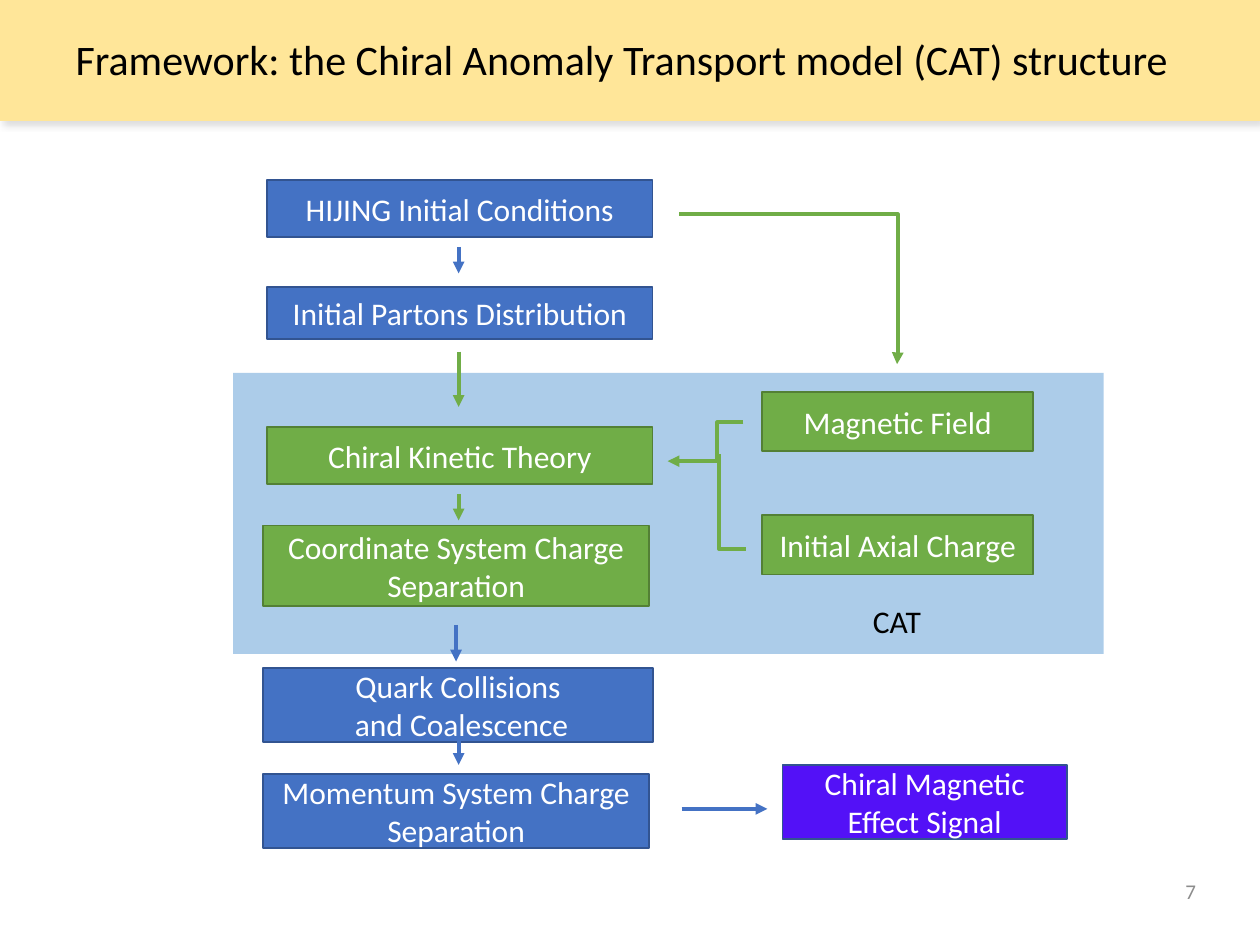
from dataclasses import dataclass

from lxml import etree
from pptx import Presentation
from pptx import util as u
from pptx.dml.color import RGBColor
from pptx.enum import shapes, text
from pptx.oxml import ns

# Grid of 100 columns by 75 rows over the slide
COLS, ROWS = 100, 75
FONT = "Calibri"
BLUE = RGBColor(0x44, 0x72, 0xC4)
NAVY = RGBColor(0x32, 0x54, 0x91)
GREEN = RGBColor(0x70, 0xAD, 0x47)
MOSS = RGBColor(0x53, 0x80, 0x35)
VIOLET = RGBColor(0x53, 0x11, 0xF7)
SKY = RGBColor(0x5B, 0x9B, 0xD5)
SAND = RGBColor(0xFF, 0xE6, 0x99)
GRAY = RGBColor(0x8C, 0x8C, 0x8C)
BLACK = RGBColor(0, 0, 0)
WHITE = RGBColor(0xFF, 0xFF, 0xFF)

ALIGN = text.PP_ALIGN
LEFT, MAIN, SIDE = 20.9, 21.2, 60.5
WIDE, SLIM = 30.6, 21.5
AXIS = 36.4


@dataclass
class Box:
    words: str
    x: float
    y: float
    w: float
    h: float
    fill: RGBColor = BLUE
    edge: RGBColor = NAVY


@dataclass
class Link:
    """An arrow; bend is the percentage of its width where an elbow turns."""
    x1: float
    y1: float
    x2: float
    y2: float
    color: RGBColor = BLUE
    bend: float | None = None
    head: bool = True


BOXES = [
    Box("HIJING Initial Conditions", MAIN, 14.3, WIDE, 4.5),
    Box("Initial Partons Distribution", MAIN, 22.8, WIDE, 4.1),
    Box("Chiral Kinetic Theory", MAIN, 33.9, WIDE, 4.5, GREEN, MOSS),
    Box("Coordinate System Charge Separation", LEFT, 41.7, WIDE, 6.4, GREEN, MOSS),
    Box("Quark Collisions\n and Coalescence", LEFT, 53, 30.9, 5.9),
    Box("Momentum System Charge Separation", LEFT, 61.4, WIDE, 5.9),
    Box("Magnetic Field", SIDE, 31.1, SLIM, 4.7, GREEN, MOSS),
    Box("Initial Axial Charge", SIDE, 40.9, SLIM, 4.7, GREEN, MOSS),
    Box("Chiral Magnetic Effect Signal", 62.1, 60.7, 22.6, 5.9, VIOLET),
]
LINKS = [
    Link(AXIS, 19.6, AXIS, 21.7),
    Link(AXIS, 27.9, AXIS, 32.3, GREEN),
    Link(AXIS, 39.2, AXIS, 41.3, GREEN),
    Link(36.2, 49.6, 36.2, 52.5),
    Link(AXIS, 58.8, AXIS, 60.7),
    Link(54.1, 64.2, 60.9, 64.2),
    Link(53.9, 17, 71.2, 28.9, GREEN, 100.3),
    Link(59, 33.5, 53, 36.6, GREEN, 34.2),
    Link(59.2, 43.6, 57.1, 36, GREEN, 100, False),
]

prs = Presentation()
prs.slide_width, prs.slide_height = u.Inches(10), u.Inches(7.5)
CELL_W, CELL_H = prs.slide_width / COLS, prs.slide_height / ROWS


def place(x: float, y: float, w: float, h: float) -> list[int]:
    """Turn grid columns and rows into slide lengths."""
    return [round(x * CELL_W), round(y * CELL_H), round(w * CELL_W), round(h * CELL_H)]


def sub(node, tag: str, **attrs: str):
    return etree.SubElement(node, ns.qn(tag), attrs)


def write(shape, words: str, size: float, color: RGBColor, align: ALIGN) -> None:
    frame = shape.text_frame
    frame.text = words
    frame.word_wrap = True
    frame.vertical_anchor = text.MSO_ANCHOR.MIDDLE
    for para in frame.paragraphs:
        para.alignment = align
        for run in para.runs:
            run.font.name = FONT
            run.font.size = u.Pt(size)
            run.font.color.rgb = color


def paint(shape, color: RGBColor) -> None:
    shape.fill.solid()
    shape.fill.fore_color.rgb = color


def block(slide, spot: list[int], color: RGBColor):
    rect = slide.shapes.add_shape(shapes.MSO_SHAPE.RECTANGLE, *spot)
    rect.shadow.inherit = False
    paint(rect, color)
    return rect


def banner(slide, words: str) -> None:
    head = slide.shapes.title
    head.left, head.top, head.width, head.height = place(0, -0.3, COLS, 9.9)
    paint(head, SAND)
    write(head, words, 24, BLACK, ALIGN.LEFT)
    head.text_frame.auto_size = text.MSO_AUTO_SIZE.NONE
    props = head.text_frame.paragraphs[0]._p.get_or_add_pPr()
    props.set("marL", "0")
    props.set("indent", str(u.Inches(0.5)))
    glow = sub(sub(head._element.spPr, "a:effectLst"), "a:outerShdw",
               blurRad=str(u.Pt(4)), dist=str(u.Pt(3)), dir="2700000",
               algn="tl", rotWithShape="0")
    sub(sub(glow, "a:srgbClr", val="A6A6A6"), "a:alpha", val="40000")


def panel(slide) -> None:
    """Draw the half-transparent field behind the CAT steps."""
    rect = block(slide, place(18.5, 29.6, 69.1, 22.3), SKY)
    rect.line.fill.background()
    tint = rect._element.spPr.find(ns.qn("a:solidFill"))[0]
    sub(tint, "a:alpha", val="50000")


def draw_box(slide, box: Box) -> None:
    rect = block(slide, place(box.x, box.y, box.w, box.h), box.fill)
    rect.line.color.rgb = box.edge
    rect.line.width = u.Pt(1)
    write(rect, box.words, 18, WHITE, ALIGN.CENTER)


def draw_link(slide, link: Link) -> None:
    kinds = shapes.MSO_CONNECTOR
    kind = kinds.STRAIGHT if link.bend is None else kinds.ELBOW
    ends = place(link.x1, link.y1, link.x2, link.y2)
    wire = slide.shapes.add_connector(kind, *ends)
    wire.line.color.rgb = link.color
    wire.line.width = u.Pt(2.25)
    props = wire._element.spPr
    if link.bend is not None:
        guides = props.find(ns.qn("a:prstGeom")).get_or_add_avLst()
        sub(guides, "a:gd", name="adj1", fmla=f"val {round(link.bend * 1000)}")
    if link.head:
        sub(wire.line._get_or_add_ln(), "a:tailEnd", type="triangle")
    sub(props, "a:effectLst")


def label(slide, words: str, spot: list[int], size: float,
          color: RGBColor, align: ALIGN) -> None:
    write(slide.shapes.add_textbox(*spot), words, size, color, align)


def main() -> None:
    slide = prs.slides.add_slide(prs.slide_layouts[5])
    banner(slide, "Framework: the Chiral Anomaly Transport model (CAT) structure")
    panel(slide)
    for box in BOXES:
        draw_box(slide, box)
    for link in LINKS:
        draw_link(slide, link)
    label(slide, "CAT", place(68.3, 47.3, 8.2, 4), 18, BLACK, ALIGN.LEFT)
    label(slide, "7", place(73.4, 68.7, 22.5, 4), 12, GRAY, ALIGN.RIGHT)
    prs.save("out.pptx")


if __name__ == "__main__":
    main()
